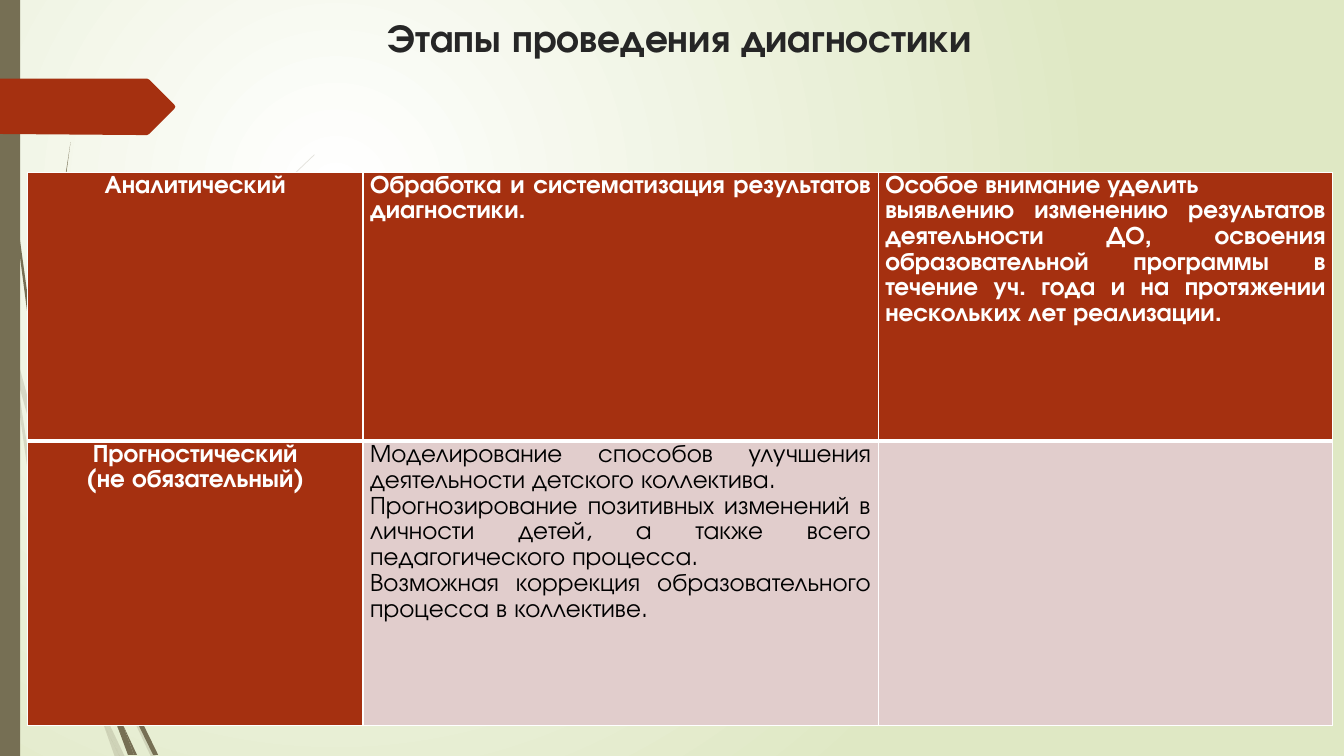
from dataclasses import dataclass

from lxml.etree import SubElement
from pptx import Presentation
from pptx.dml.color import RGBColor
from pptx.enum.shapes import MSO_SHAPE
from pptx.enum.text import MSO_ANCHOR, PP_ALIGN
from pptx.oxml.ns import qn
from pptx.util import Cm, Pt

FONT = "TeX Gyre Adventor"
WHITE = RGBColor(0xFF, 0xFF, 0xFF)
BLACK = RGBColor(0, 0, 0)
PALE_GREEN = RGBColor(0xDF, 0xE8, 0xC4)
OLIVE = RGBColor(0x76, 0x6F, 0x54)
RUST = RGBColor(0xA5, 0x30, 0x10)
PALE_PINK = RGBColor(0xE1, 0xCD, 0xCC)
TITLE_GREY = RGBColor(0x26, 0x26, 0x26)

# Outlines are given in hundredths of an inch
OUTLINE_UNIT = Cm(2.54) / 100

Outline = list[tuple[int, int]]


@dataclass
class Stage:
    """One cell of the table of stages."""
    paragraphs: list[str]
    fill: RGBColor
    color: RGBColor = WHITE
    bold: bool = True
    align: PP_ALIGN = PP_ALIGN.JUSTIFY


@dataclass
class Wisp:
    """A bunch of grass blades sharing one opacity."""
    opacity: int
    blades: list[Outline]


FAR_WISP = Wisp(20, [
    [(11, 350), (9, 322), (0, 282), (0, 299), (10, 344)],
    [(58, 522), (84, 599), (85, 586), (62, 520), (14, 345), (17, 376)],
    [(92, 607), (88, 596), (88, 610), (123, 694), (150, 751), (155, 751), (127, 692)],
    [(119, 751), (124, 751), (105, 711)],
    [(93, 683), (70, 619), (31, 469), (17, 376), (11, 350), (28, 470), (65, 621),
     (92, 693), (101, 714), (99, 707)],
    [(84, 599), (87, 646), (93, 683), (96, 692), (105, 711), (103, 706), (91, 646),
     (88, 610), (88, 608)],
    [(88, 584), (110, 462), (160, 349), (229, 245), (268, 198), (290, 175), (312, 154),
     (312, 153), (289, 175), (268, 197), (228, 244), (158, 348), (107, 461), (85, 584),
     (85, 586), (88, 596)],
    [(101, 714), (114, 751), (119, 751)],
    [(88, 608), (88, 610), (88, 596), (85, 586), (84, 599)],
    [(96, 692), (93, 683), (99, 707), (101, 714), (119, 751), (105, 711)],
])

NEAR_WISP = Wisp(100, [
    [(7, 110), (17, 233), (33, 355), (56, 477), (57, 481), (55, 457), (55, 453),
     (36, 355), (19, 232), (8, 109), (5, 48), (4, 0), (3, 0), (4, 48)],
    [(88, 592), (106, 645), (106, 633), (106, 631), (93, 590), (60, 472), (64, 505)],
    [(113, 649), (110, 641), (111, 656), (132, 708), (152, 749), (157, 749), (136, 706)],
    [(110, 691), (98, 657), (72, 556), (64, 505), (57, 477), (68, 557), (93, 659),
     (111, 708), (117, 722), (116, 717)],
    [(60, 472), (58, 453), (54, 349), (58, 245), (63, 193), (70, 141), (62, 193),
     (56, 245), (52, 349), (55, 449)],
    [(133, 749), (136, 749), (122, 719)],
    [(57, 477), (64, 505), (60, 472), (55, 449), (55, 453)],
    [(111, 633), (125, 552), (158, 476), (205, 406), (231, 374), (245, 359), (261, 344),
     (260, 344), (245, 358), (231, 373), (204, 405), (156, 474), (122, 551), (106, 631),
     (110, 641)],
    [(117, 722), (127, 749), (131, 749)],
    [(106, 645), (110, 691), (116, 706), (122, 719), (121, 716), (111, 656), (109, 651)],
    [(106, 645), (109, 651), (111, 656), (110, 641), (106, 631), (106, 633)],
    [(116, 706), (110, 691), (116, 717), (117, 722), (130, 749), (133, 749), (122, 719)],
])

ARROW_TAB: Outline = [(0, 78), (146, 78), (148, 79), (173, 104), (174, 106), (173, 108),
                      (148, 133), (146, 134), (136, 134), (0, 133)]

COLUMN_WIDTHS = [8.46, 12.98, 11.46]
ROW_HEIGHTS = [6.78, 7.16]
STAGES = [
    [
        Stage(["Аналитический"], RUST, align=PP_ALIGN.CENTER),
        Stage(["Обработка и систематизация результатов диагностики."], RUST),
        Stage(["Особое внимание уделить",
               "выявлению изменению результатов деятельности ДО, освоения образовательной "
               "программы в течение уч. года и на протяжении нескольких лет реализации."], RUST),
    ],
    [
        Stage(["Прогностический", "(не обязательный)"], RUST, align=PP_ALIGN.CENTER),
        Stage(["Моделирование способов улучшения деятельности детского коллектива.",
               "Прогнозирование позитивных изменений в личности детей, а также всего "
               "педагогического процесса.",
               "Возможная коррекция образовательного процесса в коллективе."],
              PALE_PINK, BLACK, bold=False),
        Stage([], PALE_PINK),
    ],
]


def paint(shape, color: RGBColor, opacity: int = 100) -> None:
    shape.shadow.inherit = False
    shape.fill.solid()
    shape.fill.fore_color.rgb = color
    shape.line.fill.background()
    if opacity < 100:
        tint = shape.fill._xPr.find(qn("a:solidFill"))[0]
        SubElement(tint, qn("a:alpha"), val=str(opacity * 1000))


def draw_outline(shapes, outline: Outline, color: RGBColor, opacity: int = 100) -> None:
    builder = shapes.build_freeform(*outline[0], scale=OUTLINE_UNIT)
    builder.add_line_segments(outline[1:], close=True)
    paint(builder.convert_to_shape(), color, opacity)


def draw_background(slide) -> None:
    fill = slide.background.fill
    fill.gradient()
    for stop, color in zip(fill.gradient_stops, (WHITE, PALE_GREEN)):
        stop.color.rgb = color
    gradient = slide.element.find(".//" + qn("a:gradFill"))
    gradient.remove(gradient.find(qn("a:lin")))
    circle = SubElement(gradient, qn("a:path"), path="circle")
    SubElement(circle, qn("a:fillToRect"), l="50000", t="50000", r="100000", b="100000")


def style_run(run, size: int, color: RGBColor, bold: bool) -> None:
    run.font.name = FONT
    run.font.size = Pt(size)
    run.font.color.rgb = color
    run.font.bold = bold


def set_borders(cell, top: int, bottom: int) -> None:
    """Put white borders of the given point widths before the cell's fill."""
    properties = cell._tc.get_or_add_tcPr()
    widths = {"a:lnL": 1, "a:lnR": 1, "a:lnT": top, "a:lnB": bottom}
    for position, (tag, width) in enumerate(widths.items()):
        border = SubElement(properties, qn(tag), w=str(Pt(width)))
        SubElement(SubElement(border, qn("a:solidFill")), qn("a:srgbClr"), val=str(WHITE))
        properties.insert(position, border)


def fill_cell(cell, stage: Stage) -> None:
    cell.fill.solid()
    cell.fill.fore_color.rgb = stage.fill
    cell.margin_left = cell.margin_right = Cm(0.18)
    cell.margin_top = cell.margin_bottom = 0
    cell.text_frame.text = "\n".join(stage.paragraphs)
    for paragraph in cell.text_frame.paragraphs:
        paragraph.alignment = stage.align
        paragraph.line_spacing = 1.1
        for run in paragraph.runs:
            style_run(run, 18, stage.color, stage.bold)


def draw_stages(slide) -> None:
    table = slide.shapes.add_table(
        len(ROW_HEIGHTS), len(COLUMN_WIDTHS), Cm(0.69), Cm(4.34),
        Cm(sum(COLUMN_WIDTHS)), Cm(sum(ROW_HEIGHTS))).table
    table.horz_banding = False
    for column, width in zip(table.columns, COLUMN_WIDTHS):
        column.width = Cm(width)
    for row_number, (row, height) in enumerate(zip(table.rows, ROW_HEIGHTS)):
        row.height = Cm(height)
        for cell, stage in zip(row.cells, STAGES[row_number]):
            fill_cell(cell, stage)
            set_borders(cell, *((1, 3) if row_number == 0 else (3, 1)))


def main() -> None:
    presentation = Presentation()
    presentation.slide_width, presentation.slide_height = Cm(33.87), Cm(19.05)
    slide = presentation.slides.add_slide(presentation.slide_layouts[5])
    draw_background(slide)

    # Grass, side bar and arrow tab
    for wisp in (FAR_WISP, NEAR_WISP):
        group = slide.shapes.add_group_shape()
        for blade in wisp.blades:
            draw_outline(group.shapes, blade, OLIVE, wisp.opacity)
    side_bar = slide.shapes.add_shape(MSO_SHAPE.RECTANGLE, 0, 0, Cm(0.51), Cm(19.05))
    paint(side_bar, OLIVE)
    draw_outline(slide.shapes, ARROW_TAB, RUST)

    # Title
    title = slide.shapes.title
    title.left, title.top, title.width, title.height = Cm(0.69), Cm(0.2), Cm(32.89), Cm(1.93)
    title.text_frame.text = "Этапы проведения диагностики"
    title.text_frame.vertical_anchor = MSO_ANCHOR.TOP
    title.text_frame.paragraphs[0].alignment = PP_ALIGN.CENTER
    style_run(title.text_frame.paragraphs[0].runs[0], 28, TITLE_GREY, True)

    draw_stages(slide)
    presentation.save("out.pptx")


if __name__ == "__main__":
    main()
